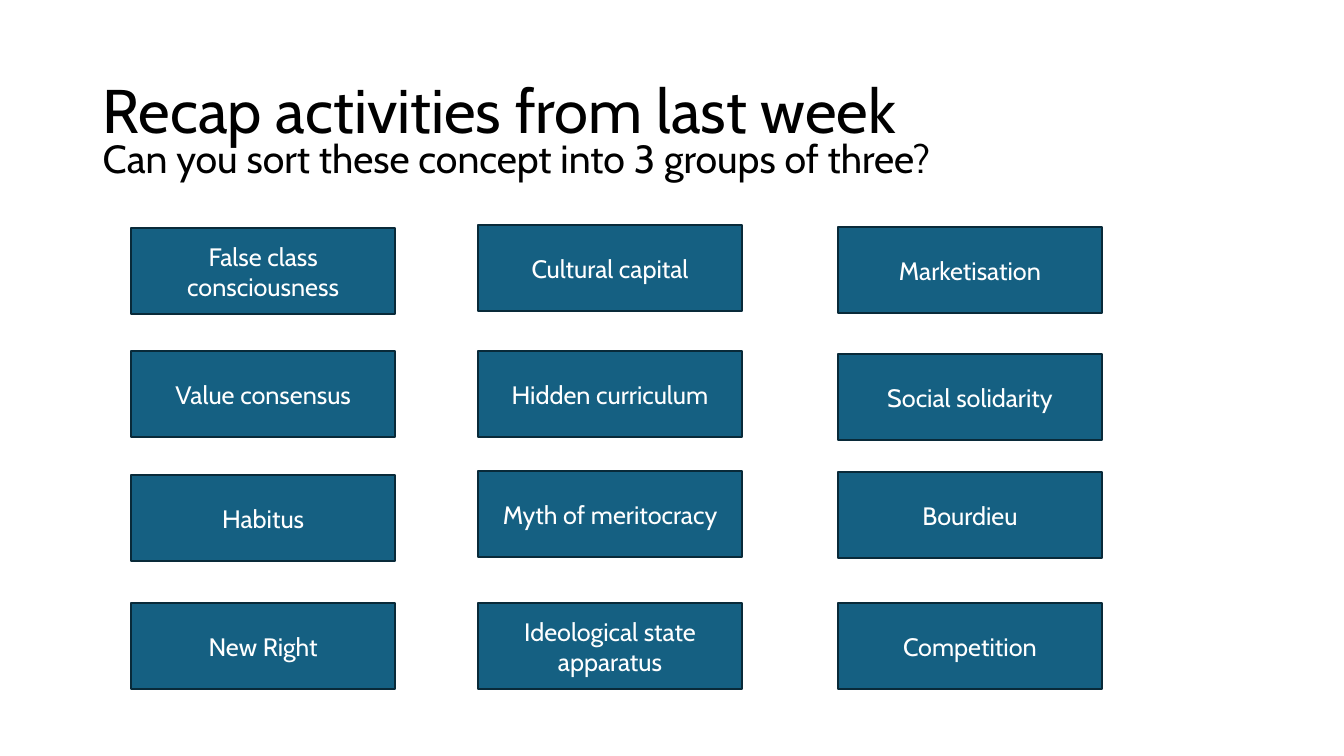
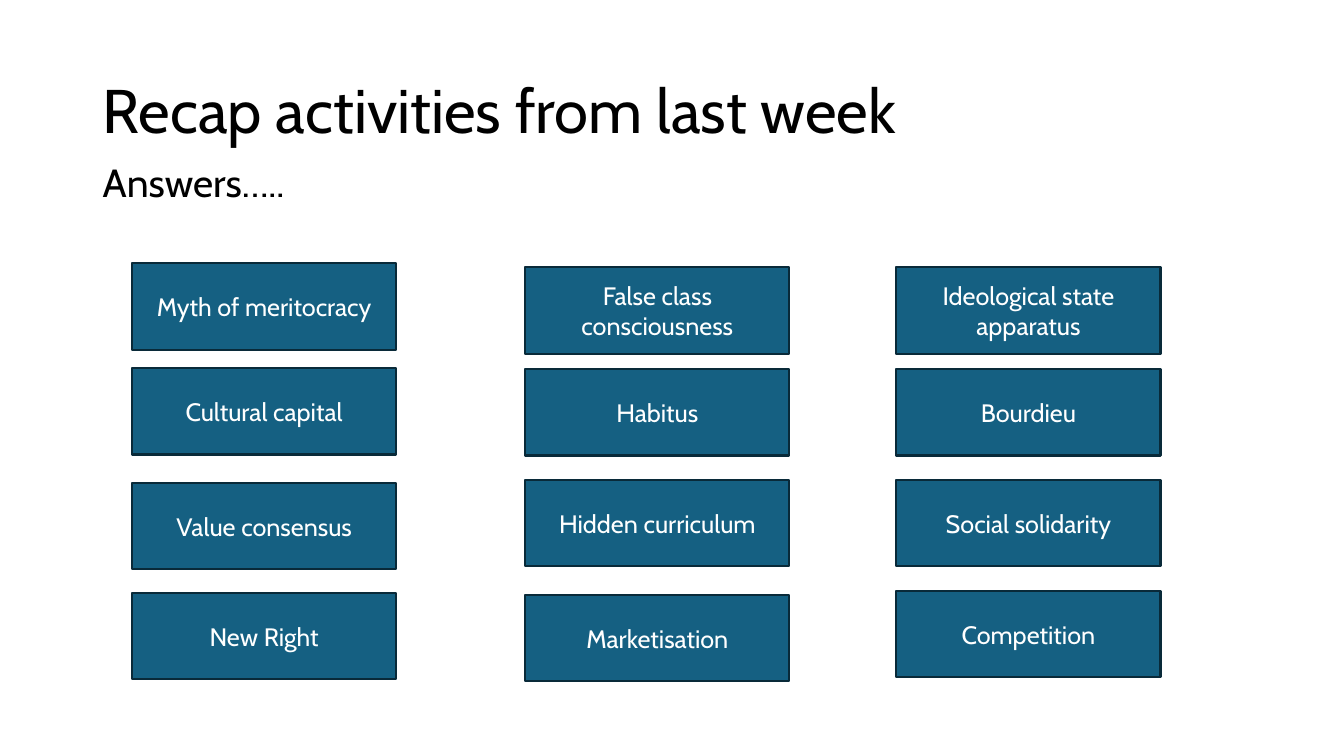
from pptx import Presentation
from pptx.dml.color import RGBColor
from pptx.enum.shapes import MSO_SHAPE
from pptx.enum.text import MSO_ANCHOR, PP_ALIGN
from pptx.util import Inches, Pt

RECTANGLE = MSO_SHAPE.RECTANGLE
TOP, MIDDLE = MSO_ANCHOR.TOP, MSO_ANCHOR.MIDDLE
LEFT, CENTER = PP_ALIGN.LEFT, PP_ALIGN.CENTER

FONT = "Cabin"
COLORS = {"text": "000000", "card": "156082", "border": "092A39", "card_text": "FFFFFF"}
TEXT_LEFT, TEXT_WIDTH = 0.92, 11.5
CARD_WIDTH, CARD_HEIGHT = 2.62, 0.86

TITLE = "Recap activities from last week"

# Each column is its left edge and its cards, given as (top, concept).
SLIDES = [
    {
        "prompt": "Can you sort these concept into 3 groups of three?",
        "prompt_top": 1.34,
        "prompt_height": 5.42,
        "columns": [
            (1.3, [(2.26, "False class consciousness"), (3.48, "Value consensus"),
                   (4.71, "Habitus"), (5.98, "New Right")]),
            (4.74, [(2.23, "Cultural capital"), (3.48, "Hidden curriculum"),
                    (4.67, "Myth of meritocracy"), (5.98, "Ideological state apparatus")]),
            (8.31, [(2.25, "Marketisation"), (3.51, "Social solidarity"),
                    (4.68, "Bourdieu"), (5.98, "Competition")]),
        ],
    },
    {
        "prompt": "Answers…..",
        "prompt_top": 1.57,
        "prompt_height": 4.76,
        "columns": [
            (1.31, [(2.61, "Myth of meritocracy"), (3.65, "Cultural capital"),
                    (4.79, "Value consensus"), (5.88, "New Right")]),
            (5.21, [(2.65, "False class consciousness"), (3.66, "Habitus"),
                    (4.76, "Hidden curriculum"), (5.9, "Marketisation")]),
            (8.89, [(2.65, "Ideological state apparatus"), (3.66, "Bourdieu"),
                    (4.76, "Social solidarity"), (5.86, "Competition")]),
        ],
    },
]


def color(name):
    return RGBColor.from_string(COLORS[name])


def write(shape, text, size, color_name, anchor, align):
    """Fill the shape with one styled paragraph and return that paragraph."""
    frame = shape.text_frame
    frame.word_wrap = True
    frame.vertical_anchor = anchor
    para = frame.paragraphs[0]
    para.alignment = align
    span = para.add_run()
    span.text = text
    span.font.name = FONT
    span.font.size = Pt(size)
    span.font.color.rgb = color(color_name)
    return para


def add_heading(page, text, top, height, size, anchor, space_before=0):
    box = page.shapes.add_textbox(
        Inches(TEXT_LEFT), Inches(top), Inches(TEXT_WIDTH), Inches(height))
    para = write(box, text, size, "text", anchor, LEFT)
    para.line_spacing = 0.9
    para.space_before = Pt(space_before)


def add_card(page, text, left, top):
    card = page.shapes.add_shape(
        RECTANGLE, Inches(left), Inches(top), Inches(CARD_WIDTH), Inches(CARD_HEIGHT))
    card.shadow.inherit = False
    card.fill.solid()
    card.fill.fore_color.rgb = color("card")
    card.line.color.rgb = color("border")
    card.line.width = Pt(1.5)
    write(card, text, 18, "card_text", MIDDLE, CENTER)


def add_page(deck, content):
    page = deck.slides.add_slide(deck.slide_layouts[6])
    add_heading(page, TITLE, 0.4, 1.45, 44, MIDDLE)
    add_heading(page, content["prompt"], content["prompt_top"],
                content["prompt_height"], 28, TOP, space_before=10)
    for left, cards in content["columns"]:
        for top, concept in cards:
            add_card(page, concept, left, top)


def main():
    deck = Presentation()
    deck.slide_width = Inches(13.33)
    deck.slide_height = Inches(7.5)
    for content in SLIDES:
        add_page(deck, content)
    deck.save("out.pptx")


if __name__ == "__main__":
    main()
